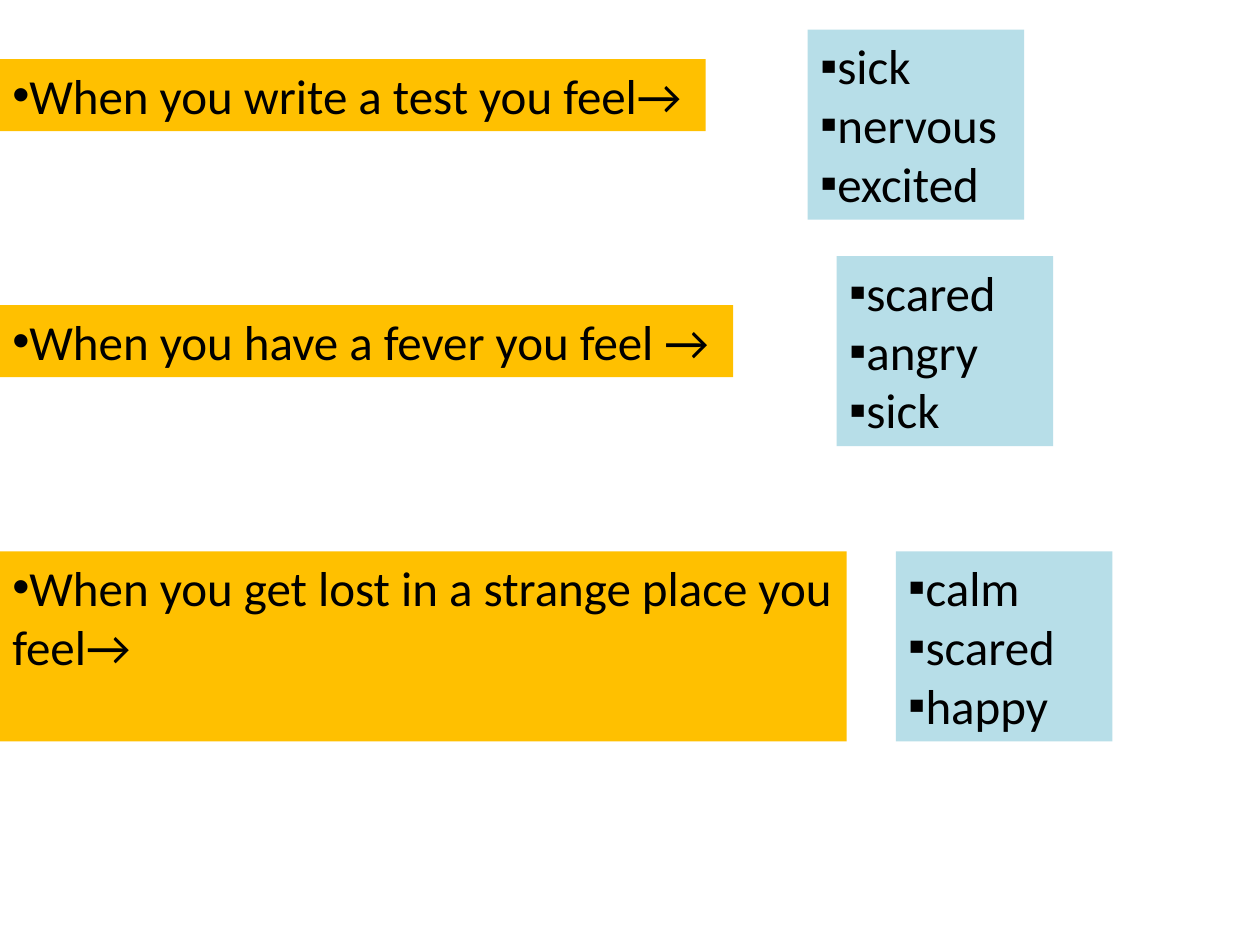
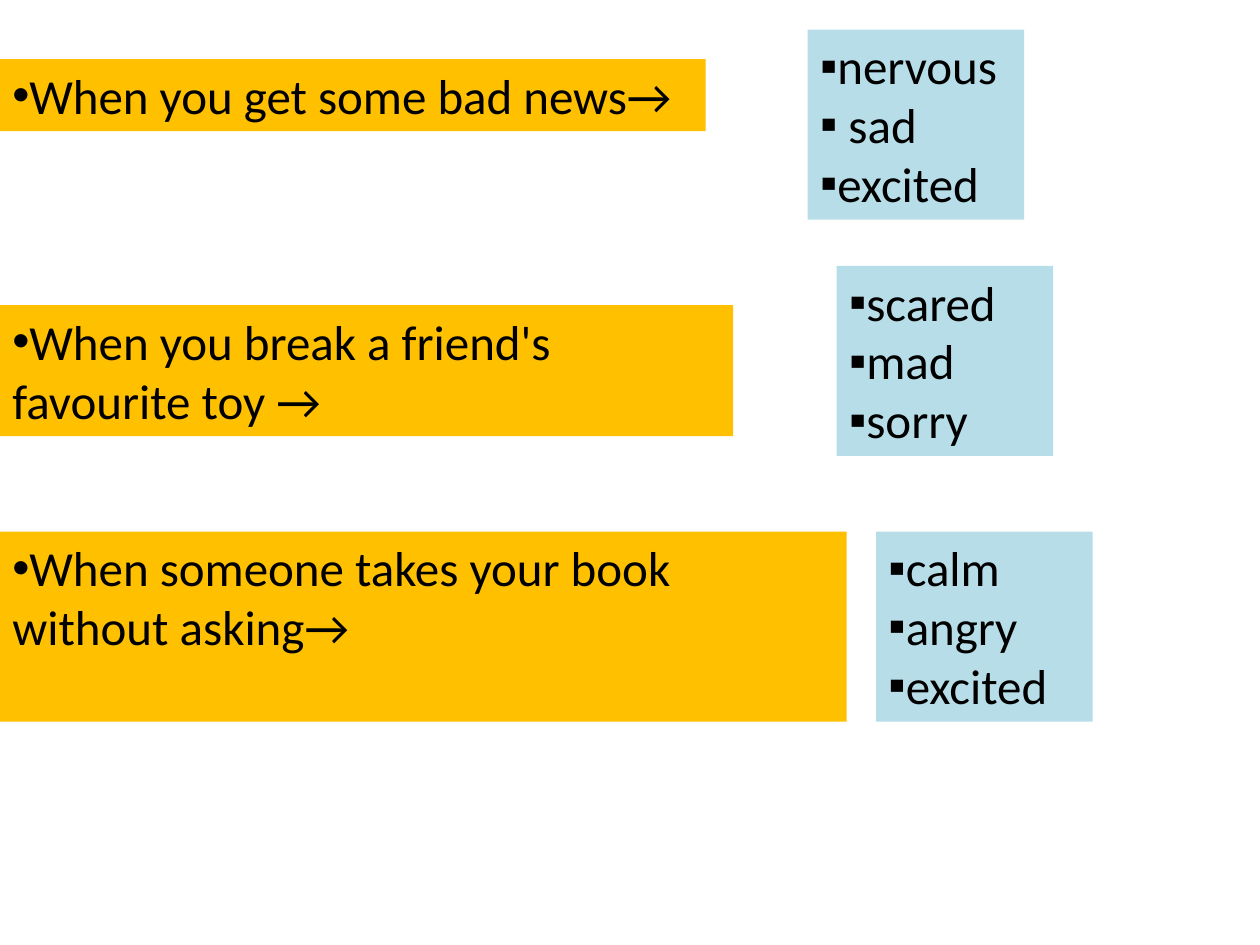
"""Builds two quiz slides that match situations with feelings."""
from lxml.etree import SubElement
from pptx import Presentation
from pptx.dml.color import RGBColor
from pptx.enum.shapes import MSO_SHAPE as Shape
from pptx.enum.text import MSO_ANCHOR as Anchor, PP_ALIGN as Align
from pptx.oxml.ns import qn
from pptx.util import Pt

COLORS = {"situation": "FFC000", "feelings": "B7DEE8", "text": "000000"}
ROW_WIDTHS = (403.2, 419, 483.8)
LINE_HEIGHT = 33.75
PADDING = 7.4
FEELINGS_WIDTH = 123.8

QUIZZES = (
    (
        ("When you write a test you feel→", 33.8, 1, ("sick", "nervous", "excited"), 461.5, 16.9),
        ("When you have a fever you feel →", 174.4, 1, ("scared", "angry", "sick"), 478.1, 146.3),
        ("When you get lost in a strange place you feel→", 315, 3,
         ("calm", "scared", "happy"), 511.9, 315),
    ),
    (
        ("When you get some bad news→", 33.8, 1, ("nervous", " sad", "excited"), 461.5, 16.9),
        ("When you break a friend's favourite toy →", 174.4, 2,
         ("scared", "mad", "sorry"), 478.1, 151.9),
        ("When someone takes your book without asking→", 303.8, 3,
         ("calm", "angry", "excited"), 500.6, 303.8),
    ),
)


def write(paragraph, text, bullet="•", font="Calibri", size=28, color="text"):
    paragraph.alignment = Align.LEFT
    properties = paragraph._p.get_or_add_pPr()
    properties.set("marL", "0")
    properties.set("indent", "0")
    SubElement(properties, qn("a:buFont")).set("typeface", "Arial")
    SubElement(properties, qn("a:buChar")).set("char", bullet)
    run = paragraph.add_run()
    run.text = text
    run.font.name = font
    run.font.size = Pt(size)
    run.font.color.rgb = RGBColor.from_string(COLORS[color])


class QuizDeck:
    def __init__(self):
        self.deck = Presentation()
        self.deck.slide_width, self.deck.slide_height = Pt(720), Pt(540)
        self.slide = None

    def new_slide(self):
        self.slide = self.deck.slides.add_slide(self.deck.slide_layouts[6])

    def panel(self, left, top, width, line_count, color, lines, bullet):
        height = line_count * LINE_HEIGHT + PADDING
        panel = self.slide.shapes.add_shape(
            Shape.RECTANGLE, Pt(left), Pt(top), Pt(width), Pt(height))
        panel.shadow.inherit = False
        panel.fill.solid()
        panel.fill.fore_color.rgb = RGBColor.from_string(COLORS[color])
        panel.line.fill.background()
        frame = panel.text_frame
        frame.word_wrap = True
        frame.vertical_anchor = Anchor.TOP
        for index, line in enumerate(lines):
            paragraph = frame.add_paragraph() if index else frame.paragraphs[0]
            write(paragraph, line, bullet=bullet)

    def situation(self, text, top, width, line_count):
        self.panel(0, top, width, line_count, "situation", [text], "•")

    def feelings(self, words, left, top):
        self.panel(left, top, FEELINGS_WIDTH, len(words), "feelings", words, "▪")


def main():
    quiz = QuizDeck()
    for rows in QUIZZES:
        quiz.new_slide()
        for width, row in zip(ROW_WIDTHS, rows):
            situation, top, line_count, words, words_left, words_top = row
            quiz.situation(situation, top, width, line_count)
            quiz.feelings(words, words_left, words_top)
    quiz.deck.save("out.pptx")


if __name__ == "__main__":
    main()
